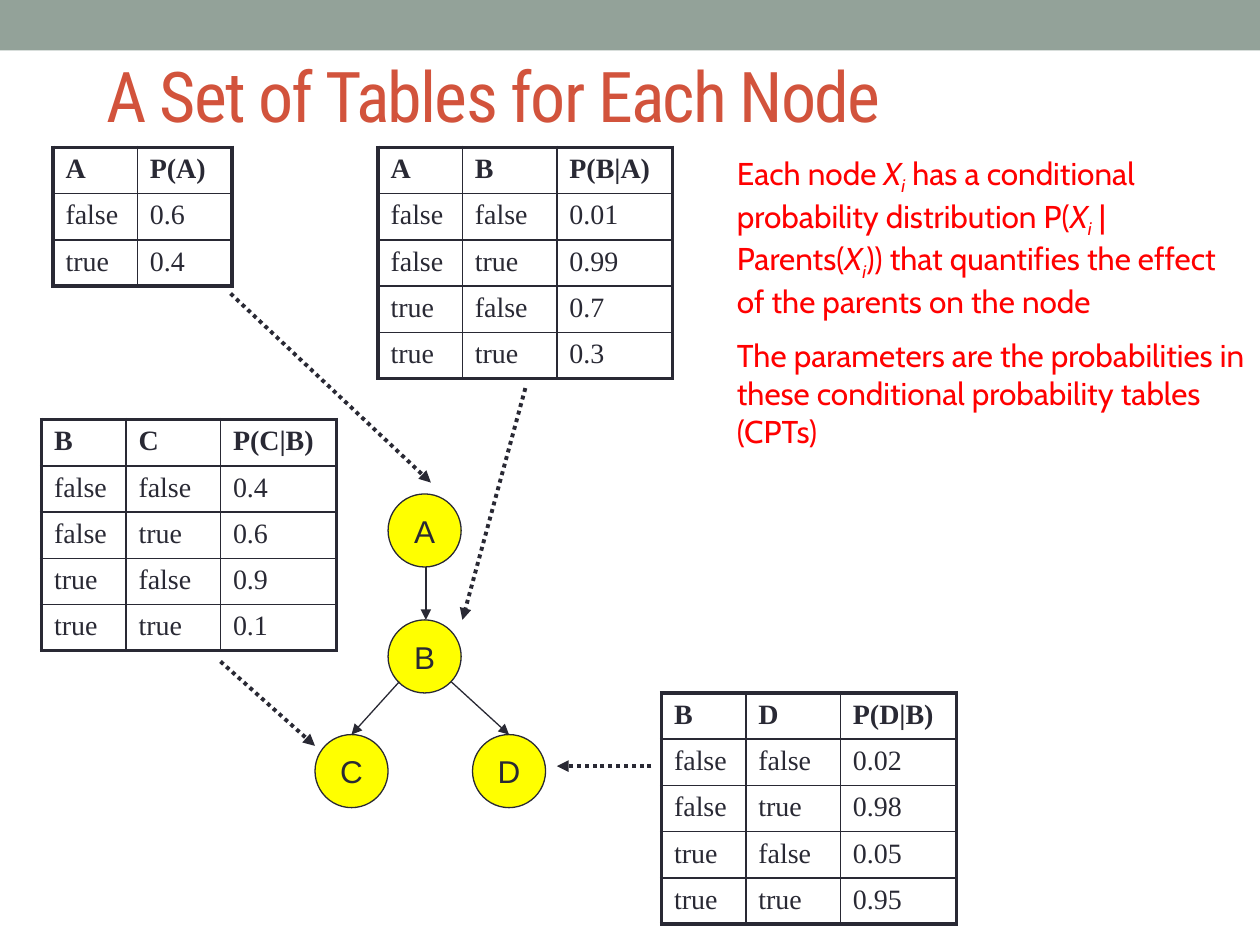
from lxml.etree import SubElement
from pptx import Presentation
from pptx.dml.color import RGBColor
from pptx.enum.dml import MSO_LINE_DASH_STYLE as DASH
from pptx.enum.shapes import MSO_CONNECTOR as CONNECTOR, MSO_SHAPE as SHAPE
from pptx.enum.text import MSO_ANCHOR as ANCHOR, PP_ALIGN as ALIGN
from pptx.oxml.ns import qn
from pptx.util import Inches, Pt


def color(value):
    return RGBColor.from_string(value)


def write(para, text, hue, **format_values):
    span = para.add_run()
    span.text = text
    span.font.color.rgb = color(hue)
    for name, value in format_values.items():
        setattr(span.font, name, value)
    return span


INK, RED = "292934", "FF0000"
TITLE = dict(name="Roboto Condensed", size=Pt(40))
BODY = dict(name="Cabin", size=Pt(18))
CELL = dict(name="Times New Roman", size=Pt(16))
NODE = dict(name="Arial", size=Pt(18))

deck = Presentation()
deck.slide_width, deck.slide_height = Inches(10), Inches(7.5)
page = deck.slides.add_slide(deck.slide_layouts[6])

band = page.shapes.add_shape(SHAPE.RECTANGLE, 0, 0, Inches(10), Inches(0.4))
band.shadow.inherit = False
band.fill.solid()
band.fill.fore_color.rgb = color("93A299")
band.line.fill.background()

title_box = page.shapes.add_textbox(Inches(0.75), Inches(0.29), Inches(8.5), Inches(0.92))
title_box.text_frame.word_wrap = True
title_box.text_frame.vertical_anchor = ANCHOR.MIDDLE
title = write(title_box.text_frame.paragraphs[0], "A Set of Tables for Each Node", "D2533C", **TITLE)
title._r.get_or_add_rPr().set("spc", "-100")

notes_box = page.shapes.add_textbox(Inches(5.75), Inches(1.17), Inches(4.25), Inches(2.37))
notes_box.text_frame.word_wrap = True
para = notes_box.text_frame.paragraphs[0]
para.space_before = Pt(9)
pieces = [
    "Each node ",
    " has a conditional probability distribution P(",
    " | Parents(",
    ")) that quantifies the effect of the parents on the node",
]
for index, piece in enumerate(pieces):
    if index:
        write(para, "X", RED, italic=True, **BODY)
        subscript = write(para, "i", RED, italic=True, **BODY)
        subscript._r.get_or_add_rPr().set("baseline", "-25000")
    write(para, piece, RED, **BODY)
para = notes_box.text_frame.add_paragraph()
para.space_before = Pt(9)
write(para, "The parameters are the probabilities in these conditional probability tables (CPTs)", RED, **BODY)

pairs = [("false", "false"), ("false", "true"), ("true", "false"), ("true", "true")]
tables = [
    (0.42, 1.17, ("A", "P(A)"), [("false",), ("true",)], ("0.6", "0.4")),
    (3, 1.17, ("A", "B", "P(B|A)"), pairs, ("0.01", "0.99", "0.7", "0.3")),
    (0.33, 3.33, ("B", "C", "P(C|B)"), pairs, ("0.4", "0.6", "0.9", "0.1")),
    (5.25, 5.5, ("B", "D", "P(D|B)"), pairs, ("0.02", "0.98", "0.05", "0.95")),
]
column_widths = (0.67, 0.75, 0.92)
row_height = Inches(1.1 / 3)
for left, top, header, states, chances in tables:
    rows = [header] + [(*state, chance) for state, chance in zip(states, chances)]
    widths = column_widths[:len(header)]
    frame = page.shapes.add_table(len(rows), len(header), Inches(left), Inches(top),
                                  Inches(sum(widths)), row_height * len(rows))
    table = frame.table
    table.first_row = table.horz_banding = False
    for column, width in zip(table.columns, widths):
        column.width = Inches(width)
    for r, values in enumerate(rows):
        table.rows[r].height = row_height
        for c, value in enumerate(values):
            cell = table.cell(r, c)
            write(cell.text_frame.paragraphs[0], value, INK, bold=r == 0, **CELL)
            outer = {"L": c == 0, "R": c == len(header) - 1, "T": r == 0, "B": r == len(rows) - 1}
            properties = cell._tc.get_or_add_tcPr()
            for side, is_outer in outer.items():
                border = SubElement(properties, qn(f"a:ln{side}"), w=str(Pt(2.25 if is_outer else 1)))
                SubElement(SubElement(border, qn("a:solidFill")), qn("a:srgbClr"), val=INK)
            cell.fill.background()

for label, left, top in [("A", 3.08, 3.92), ("B", 3.08, 4.92), ("C", 2.5, 5.83), ("D", 3.75, 5.83)]:
    node = page.shapes.add_shape(SHAPE.OVAL, Inches(left), Inches(top), Inches(0.58), Inches(0.58))
    node.shadow.inherit = False
    node.fill.solid()
    node.fill.fore_color.rgb = color("FFFF00")
    node.line.color.rgb = color(INK)
    node.line.width = Pt(0.75)
    node.text_frame.word_wrap = False
    node.text_frame.vertical_anchor = ANCHOR.MIDDLE
    para = node.text_frame.paragraphs[0]
    para.alignment = ALIGN.CENTER
    write(para, label, INK, **NODE)

edge = dict(width=Pt(0.75))
pointer = dict(width=Pt(2.25), dash_style=DASH.ROUND_DOT)
arrows = [
    (3.38, 4.5, 3.38, 4.92, edge),
    (3.17, 5.41, 2.79, 5.83, edge),
    (3.58, 5.41, 4.04, 5.83, edge),
    (1.83, 2.33, 3.42, 3.83, pointer),
    (4.17, 3.08, 3.67, 4.92, pointer),
    (5.17, 6.08, 4.42, 6.08, pointer),
    (1.75, 5.25, 2.5, 5.92, pointer),
]
for *ends, format_values in arrows:
    arrow = page.shapes.add_connector(CONNECTOR.STRAIGHT, *map(Inches, ends))
    arrow.line.color.rgb = color(INK)
    for name, value in format_values.items():
        setattr(arrow.line, name, value)
    SubElement(arrow.line._get_or_add_ln(), qn("a:tailEnd"), type="triangle")
    SubElement(arrow._element.spPr, qn("a:effectLst"))

deck.save("out.pptx")
